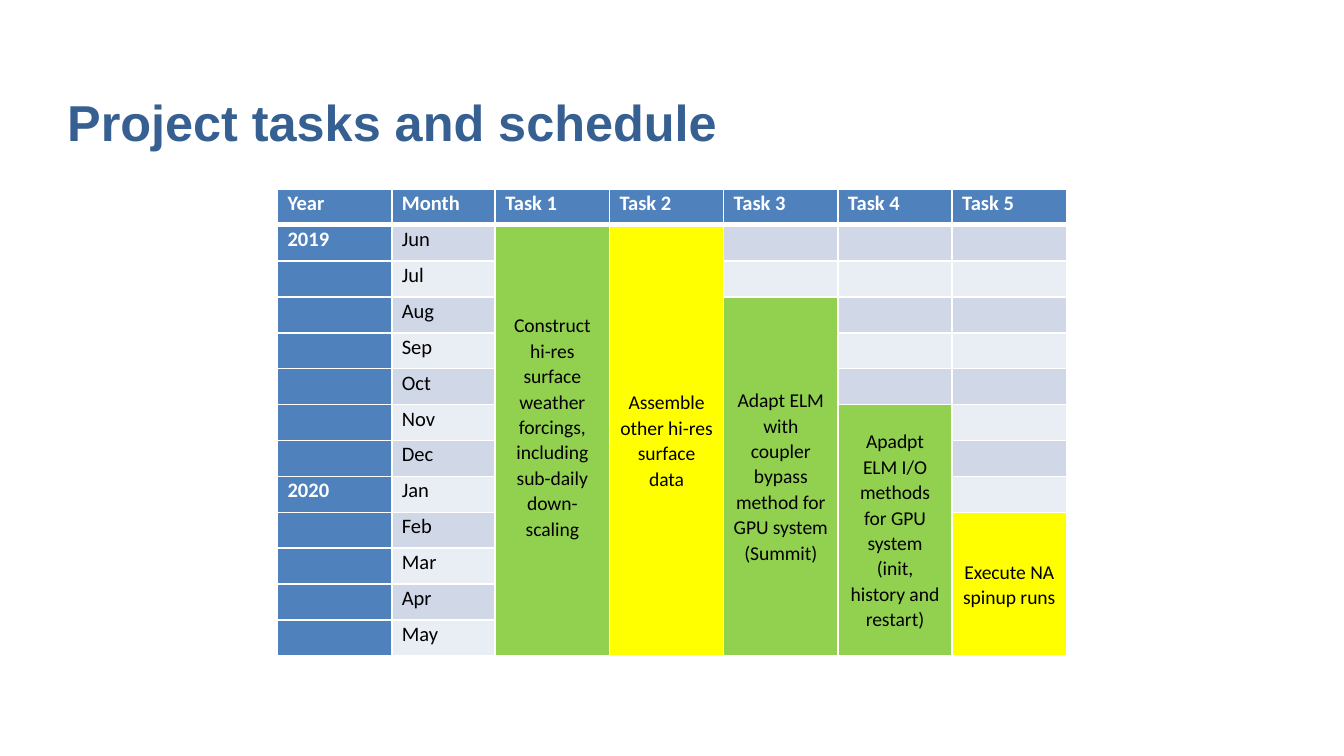
from dataclasses import dataclass

import pptx
import pptx.dml.color
import pptx.enum.text
import pptx.oxml.ns
import pptx.util
from lxml import etree

WIDTH = 10
HEIGHT = WIDTH * 9 / 16
HEADER, GREEN, YELLOW = "4F81BD", "92D050", "FFFF00"
BANDS = ("D0D8E8", "E9EDF4")
WHITE, BLACK = "FFFFFF", "000000"
HEADINGS = ["Year", "Month"] + [f"Task {number}" for number in range(1, 6)]
MONTHS = "Jun Jul Aug Sep Oct Nov Dec Jan Feb Mar Apr May".split()
YEARS = {"Jun": "2019", "Jan": "2020"}
COLUMN_WIDTHS = [0.85, 0.77] + [0.85] * 5
ROW_HEIGHT = 3.48 / (len(MONTHS) + 1)


@dataclass
class Task:
    """A task that runs from its starting month to the end of the table."""
    column: int
    start: str
    text: str
    fill: str
    bottom_margin: float = 0


TASKS = [
    Task(2, "Jun", "Construct hi-res surface weather forcings, including "
         "sub-daily down-scaling", GREEN, 0.2),
    Task(3, "Jun", "Assemble other hi-res surface data", YELLOW),
    Task(4, "Aug", "Adapt ELM with coupler bypass method for GPU system (Summit)", GREEN),
    Task(5, "Nov", "Apadpt ELM I/O methods for GPU system (init, history and restart)", GREEN),
    Task(6, "Feb", "Execute NA spinup runs", YELLOW),
]


def colour(value: str) -> pptx.dml.color.RGBColor:
    return pptx.dml.color.RGBColor.from_string(value)


def add_span(para, text: str, font: str, size: float, ink: str, bold: bool) -> None:
    span = para.add_run()
    span.text = text
    span.font.name = font
    span.font.size = pptx.util.Pt(size)
    span.font.bold = bold
    span.font.color.rgb = colour(ink)


def add_borders(cell, top: float, bottom: float) -> None:
    properties = cell._tc.get_or_add_tcPr()
    for side, points in (("L", 1), ("R", 1), ("T", top), ("B", bottom)):
        line = etree.SubElement(properties, pptx.oxml.ns.qn(f"a:ln{side}"),
                                w=str(pptx.util.Pt(points)))
        fill = etree.SubElement(line, pptx.oxml.ns.qn("a:solidFill"))
        etree.SubElement(fill, pptx.oxml.ns.qn("a:srgbClr"), val=WHITE)


def set_fill(cell, value: str) -> None:
    cell.fill.solid()
    cell.fill.fore_color.rgb = colour(value)


def format_cell(cell, text: str, row: int, column: int) -> None:
    heading = row == 0 or column == 0
    cell.margin_left = cell.margin_right = pptx.util.Pt(5.4)
    cell.margin_top = cell.margin_bottom = 0
    add_borders(cell, 3 if row == 1 else 1, 3 if row == 0 else 1)
    set_fill(cell, HEADER if heading else BANDS[(row - 1) % 2])
    para = cell.text_frame.paragraphs[0]
    para.line_spacing = 1.07
    if text:
        add_span(para, text, "Calibri", 11, WHITE if heading else BLACK, heading)
    else:
        # Keeps an empty cell from stretching its row
        etree.SubElement(para._p, pptx.oxml.ns.qn("a:endParaRPr"), sz="1100")


def draw_task(table, task: Task) -> None:
    cell = table.cell(MONTHS.index(task.start) + 1, task.column)
    cell.merge(table.cell(len(MONTHS), task.column))
    set_fill(cell, task.fill)
    cell.vertical_anchor = pptx.enum.text.MSO_ANCHOR.MIDDLE
    cell.margin_bottom = pptx.util.Inches(task.bottom_margin)
    para = cell.text_frame.paragraphs[0]
    para.alignment = pptx.enum.text.PP_ALIGN.CENTER
    add_span(para, task.text, "Calibri", 10.5, BLACK, False)


def draw_title(page, text: str) -> None:
    title = page.shapes.title
    title.left, title.top, title.width, title.height = (
        pptx.util.Inches(length)
        for length in (WIDTH * 0.05, HEIGHT * 0.04, WIDTH * 0.9, HEIGHT * 0.16))
    frame = title.text_frame
    frame.margin_left = frame.margin_top = frame.margin_right = frame.margin_bottom = 0
    frame.vertical_anchor = pptx.enum.text.MSO_ANCHOR.BOTTOM
    frame.word_wrap = True
    para = frame.paragraphs[0]
    para.alignment = pptx.enum.text.PP_ALIGN.LEFT
    add_span(para, text, "Arial", 27, "376092", True)


def draw_schedule(page) -> None:
    rows = [HEADINGS] + [[YEARS.get(month, ""), month] + [""] * len(TASKS)
                         for month in MONTHS]
    total_width = sum(COLUMN_WIDTHS)
    table = page.shapes.add_table(
        len(rows), len(HEADINGS),
        pptx.util.Inches((WIDTH - total_width) / 2), pptx.util.Inches(HEIGHT * 0.25),
        pptx.util.Inches(total_width), pptx.util.Inches(ROW_HEIGHT * len(rows))).table
    for column, width in zip(table.columns, COLUMN_WIDTHS):
        column.width = pptx.util.Inches(width)
    for row, texts in enumerate(rows):
        table.rows[row].height = pptx.util.Inches(ROW_HEIGHT)
        for column, text in enumerate(texts):
            format_cell(table.cell(row, column), text, row, column)
    for task in TASKS:
        draw_task(table, task)


def main() -> None:
    deck = pptx.Presentation()
    deck.slide_width = pptx.util.Inches(WIDTH)
    deck.slide_height = pptx.util.Inches(HEIGHT)
    page = deck.slides.add_slide(deck.slide_layouts[5])
    draw_title(page, "Project tasks and schedule")
    draw_schedule(page)
    deck.save("out.pptx")


if __name__ == "__main__":
    main()
